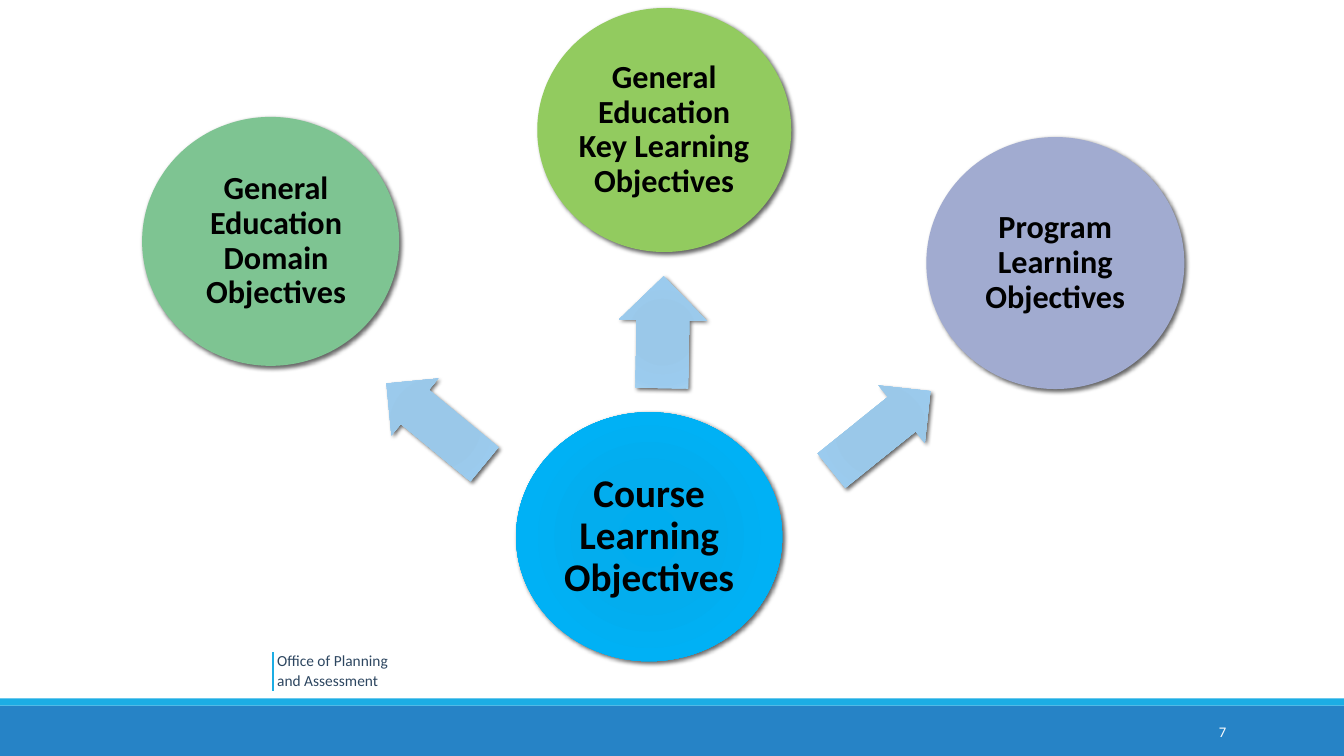
from dataclasses import dataclass

from lxml.etree import SubElement
from pptx import Presentation
from pptx.dml.color import RGBColor
from pptx.enum.shapes import MSO_CONNECTOR, MSO_SHAPE
from pptx.enum.text import MSO_ANCHOR as Anchor, PP_ALIGN as Align
from pptx.oxml.ns import qn
from pptx.util import Inches, Pt

CELL = Pt(6)  # the slide is 160 columns by 90 rows
COLORS = {
    "bar": "2683C6", "accent": "1CADE4", "footer": "2D4660",
    "text": "000000", "number": "FFFFFF", "shadow": "000000",
    "domain": "7EC492", "key": "92CB5F", "program": "A1ABD0",
}
GRADIENTS = {
    "course": {0: "00ADEF", 34: "03ADEE", 70: "00B1F5", 100: "12B1EE"},
    "arrow": {0: "97C6E8", 34: "9AC8E9", 70: "9BCBEE", 100: "A9D4F2"},
}


@dataclass(frozen=True)
class Area:
    """A rectangle in grid columns and rows."""
    column: float
    row: float
    columns: float
    rows: float

    def lengths(self) -> list[int]:
        return [round(n * CELL) for n in (self.column, self.row, self.columns, self.rows)]


@dataclass(frozen=True)
class Circle:
    text: str
    area: Area
    fill: str
    size: float = 23
    inset: float = 0.03
    shift: float = 0


@dataclass(frozen=True)
class Arrow:
    area: Area
    rotation: float


CIRCLES = [
    Circle("General Education\nDomain Objectives",
           Area(16.92, 13.92, 30.6, 29.64), "domain", shift=0.11),
    Circle("General Education Key Learning Objectives",
           Area(63.96, 0.96, 30.24, 29.04), "key"),
    Circle("Program Learning Objectives",
           Area(110.28, 16.32, 30.72, 30), "program"),
    Circle("Course Learning Objectives",
           Area(61.44, 49.08, 31.68, 29.64), "course", size=28, inset=0.04),
]
ARROWS = [
    Arrow(Area(97.32, 46.92, 15.12, 8.76), 321.2),
    Arrow(Area(44.28, 46.08, 15.12, 8.76), 219.5),
    Arrow(Area(72.24, 34.32, 13.32, 10.44), 271),
]
BARS = [(Area(0, 84, 160, 6), "bar"), (Area(0, 83.16, 160, 0.84), "accent")]


def rgb(name: str) -> RGBColor:
    return RGBColor.from_string(COLORS[name])


def write(box, text: str, *, size: float, color: str, bold: bool = False,
          align=Align.LEFT, anchor=Anchor.TOP, spacing: float = 1.0,
          margins: tuple = (0, 0, 0, 0)) -> None:
    """Fill a shape with one paragraph; margins are left, top, right, bottom inches."""
    frame = box.text_frame
    frame.word_wrap = True
    frame.vertical_anchor = anchor
    (frame.margin_left, frame.margin_top,
     frame.margin_right, frame.margin_bottom) = map(Inches, margins)
    para = frame.paragraphs[0]
    para.text = text
    para.alignment = align
    para.line_spacing = spacing
    for span in para.runs:
        span.font.name = "Calibri"
        span.font.size = Pt(size)
        span.font.bold = bold
        span.font.color.rgb = rgb(color)
    for line_break in para._p.findall(qn("a:br")):
        SubElement(line_break, qn("a:rPr"), sz=str(round(size * 100)))


def set_radial_fill(shape, stops: dict[int, str]) -> None:
    shape.fill.gradient()
    gradient = shape.element.spPr.find(qn("a:gradFill"))
    for child in list(gradient):
        gradient.remove(child)
    stop_list = SubElement(gradient, qn("a:gsLst"))
    for position, color in stops.items():
        stop = SubElement(stop_list, qn("a:gs"), pos=str(position * 1000))
        SubElement(stop, qn("a:srgbClr"), val=color)
    route = SubElement(gradient, qn("a:path"), path="circle")
    SubElement(route, qn("a:fillToRect"), {side: "100000" for side in "ltrb"})


def add_shadow(shape) -> None:
    effects = shape.element.spPr.find(qn("a:effectLst"))
    shadow = SubElement(effects, qn("a:outerShdw"), blurRad=str(Pt(3)), dist=str(Pt(2)),
                        dir=str(45 * 60000), algn="ctr", rotWithShape="0")
    color = SubElement(shadow, qn("a:srgbClr"), val=COLORS["shadow"])
    SubElement(color, qn("a:alpha"), val="60000")


def add_figure(page, kind, area: Area, fill: str, shadow: bool = True):
    shape = page.shapes.add_shape(kind, *area.lengths())
    shape.shadow.inherit = False
    shape.line.fill.background()
    if fill in GRADIENTS:
        set_radial_fill(shape, GRADIENTS[fill])
    else:
        shape.fill.solid()
        shape.fill.fore_color.rgb = rgb(fill)
    if shadow:
        add_shadow(shape)
    return shape


def add_footer(page) -> None:
    for area, fill in BARS:
        add_figure(page, MSO_SHAPE.RECTANGLE, area, fill, shadow=False)
    office = page.shapes.add_textbox(*Area(33, 77.4, 30.72, 4.8).lengths())
    write(office, "Office of Planning \nand Assessment", size=11, color="footer", spacing=1.07)
    ends = [round(n * CELL) for n in (32.52, 77.64, 32.52, 82.32)]
    rule = page.shapes.add_connector(MSO_CONNECTOR.STRAIGHT, *ends)
    rule.line.color.rgb = rgb("accent")
    rule.line.width = Pt(1)
    SubElement(rule.element.spPr, qn("a:effectLst"))
    number = page.shapes.add_textbox(*Area(130, 84.72, 17.16, 4.8).lengths())
    write(number, "7", size=10.5, color="number", align=Align.RIGHT,
          anchor=Anchor.MIDDLE, margins=(0.1, 0.05, 0.1, 0.05))


def add_circle(page, circle: Circle) -> None:
    shape = add_figure(page, MSO_SHAPE.OVAL, circle.area, circle.fill)
    inset = circle.inset
    write(shape, circle.text, size=circle.size, color="text", bold=True,
          align=Align.CENTER, anchor=Anchor.MIDDLE, spacing=0.9,
          margins=(inset + circle.shift, inset, inset, inset))


def add_arrow(page, arrow: Arrow) -> None:
    shape = add_figure(page, MSO_SHAPE.RIGHT_ARROW, arrow.area, "arrow")
    shape.adjustments[0] = 0.6
    shape.adjustments[1] = 0.5
    shape.rotation = arrow.rotation


def main() -> None:
    deck = Presentation()
    deck.slide_width, deck.slide_height = 160 * CELL, 90 * CELL
    page = deck.slides.add_slide(deck.slide_layouts[6])
    add_footer(page)
    for circle in CIRCLES:
        add_circle(page, circle)
    for arrow in ARROWS:
        add_arrow(page, arrow)
    deck.save("out.pptx")


if __name__ == "__main__":
    main()
